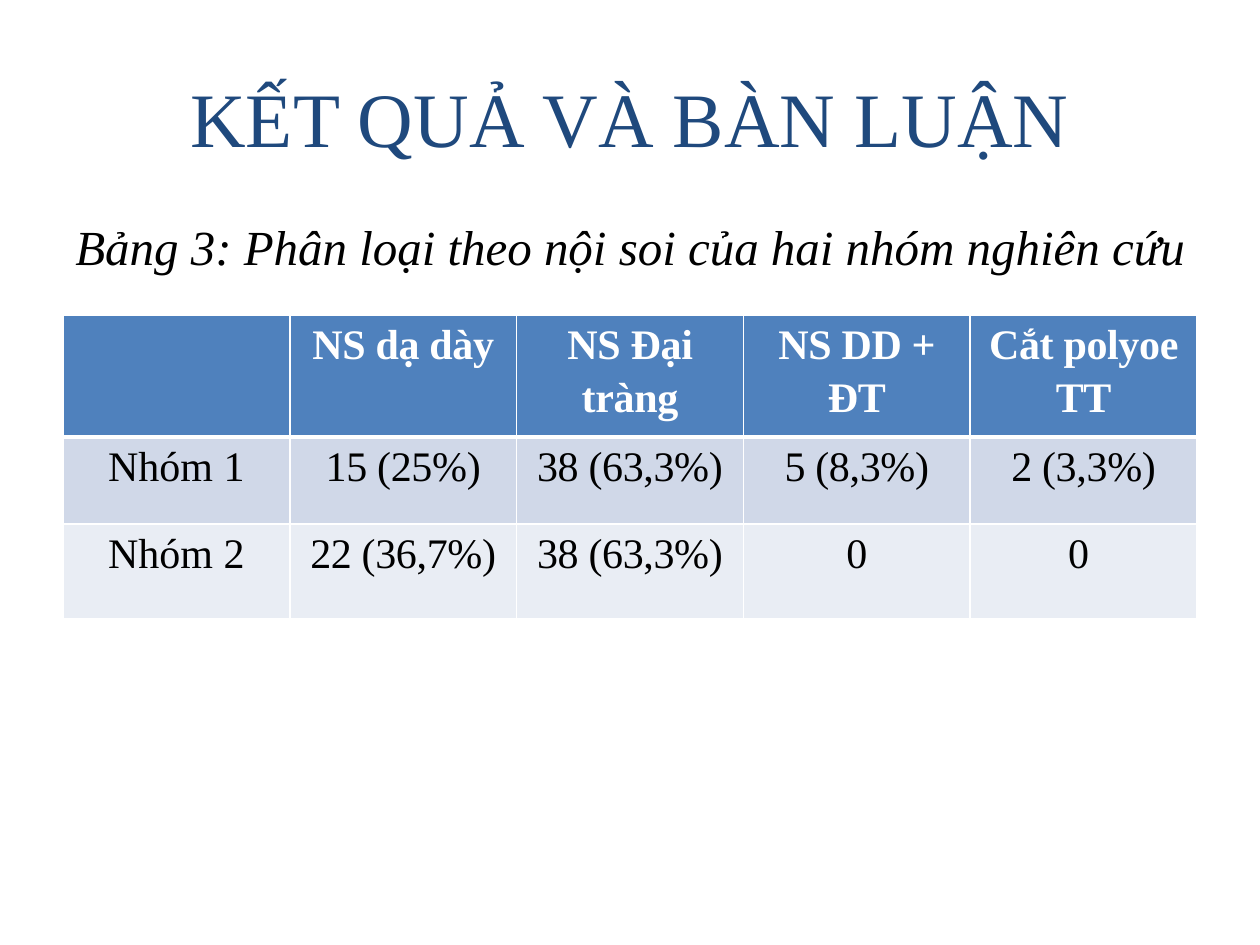
"""Build the results slide: endoscopy types in the two study groups."""
from lxml.etree import SubElement
from pptx import Presentation
from pptx.dml.color import RGBColor
from pptx.enum.text import MSO_ANCHOR as Anchor, PP_ALIGN as Align
from pptx.oxml.ns import qn
from pptx.util import Cm, Pt

FONT = "Times New Roman"
NAVY = RGBColor(0x1F, 0x49, 0x7D)
BLUE = RGBColor(0x4F, 0x81, 0xBD)
PALE_BLUE = RGBColor(0xD0, 0xD8, 0xE8)
PALER_BLUE = RGBColor(0xE9, 0xED, 0xF4)
WHITE = RGBColor(0xFF, 0xFF, 0xFF)
BLACK = RGBColor(0, 0, 0)

ROWS = [
    ["", "NS dạ dày", "NS Đại tràng", "NS DD + ĐT", "Cắt polyoe TT"],
    ["Nhóm 1", "15 (25%)", "38 (63,3%)", "5 (8,3%)", "2 (3,3%)"],
    ["Nhóm 2", "22 (36,7%)", "38 (63,3%)", "0", "0 "],
]
ROW_HEIGHTS = [Cm(2.46), Cm(1.75), Cm(1.91)]
ROW_FILLS = [BLUE, PALE_BLUE, PALER_BLUE]


def style_text(paragraph, size, color, bold=False, italic=False):
    for run in paragraph.runs:
        run.font.name = FONT
        run.font.size = Pt(size)
        run.font.color.rgb = color
        run.font.bold = bold
        run.font.italic = italic


def add_border(cell, side, width):
    line = SubElement(cell._tc.get_or_add_tcPr(), qn(f"a:{side}"), w=str(Pt(width)))
    SubElement(SubElement(line, qn("a:solidFill")), qn("a:srgbClr"), val=str(WHITE))


prs = Presentation()
prs.slide_width, prs.slide_height = Cm(25.4), Cm(19.05)
slide = prs.slides.add_slide(prs.slide_layouts[5])

title = slide.shapes.title
title.left, title.top, title.width, title.height = Cm(1.27), Cm(0.76), Cm(22.86), Cm(3.18)
title.text_frame.text = "KẾT QUẢ VÀ BÀN LUẬN"
title.text_frame.vertical_anchor = Anchor.MIDDLE
title.text_frame.paragraphs[0].alignment = Align.CENTER
style_text(title.text_frame.paragraphs[0], 44, NAVY)

results = slide.shapes.add_table(
    len(ROWS), len(ROWS[0]), Cm(1.27), Cm(6.35), Cm(22.86), sum(ROW_HEIGHTS)
).table
for row_index, (labels, height, fill) in enumerate(zip(ROWS, ROW_HEIGHTS, ROW_FILLS)):
    is_header = row_index == 0
    results.rows[row_index].height = height
    for column_index, label in enumerate(labels):
        cell = results.cell(row_index, column_index)
        cell.margin_left = cell.margin_right = Cm(0.18)
        cell.margin_top = cell.margin_bottom = 0
        for side in ("lnL", "lnR", "lnT", "lnB"):
            under_header = (row_index, side) in ((0, "lnB"), (1, "lnT"))
            add_border(cell, side, 3 if under_header else 1)
        cell.fill.solid()
        cell.fill.fore_color.rgb = fill
        cell.text_frame.text = label
        paragraph = cell.text_frame.paragraphs[0]
        paragraph.alignment = Align.CENTER
        paragraph.line_spacing = 1.15
        style_text(paragraph, 24, WHITE if is_header else BLACK, bold=is_header)
        if column_index > 0:
            for run in paragraph.runs:
                run.font._element.set("spc", "-20")

caption = slide.shapes.add_textbox(0, Cm(4.24), Cm(24.56), Cm(1.45)).text_frame
caption.word_wrap = True
caption.vertical_anchor = Anchor.MIDDLE
caption.margin_left = Cm(1.52)
caption.text = "Bảng 3: Phân loại theo nội soi của hai nhóm nghiên cứu"
style_text(caption.paragraphs[0], 28, BLACK, italic=True)

prs.save("out.pptx")
